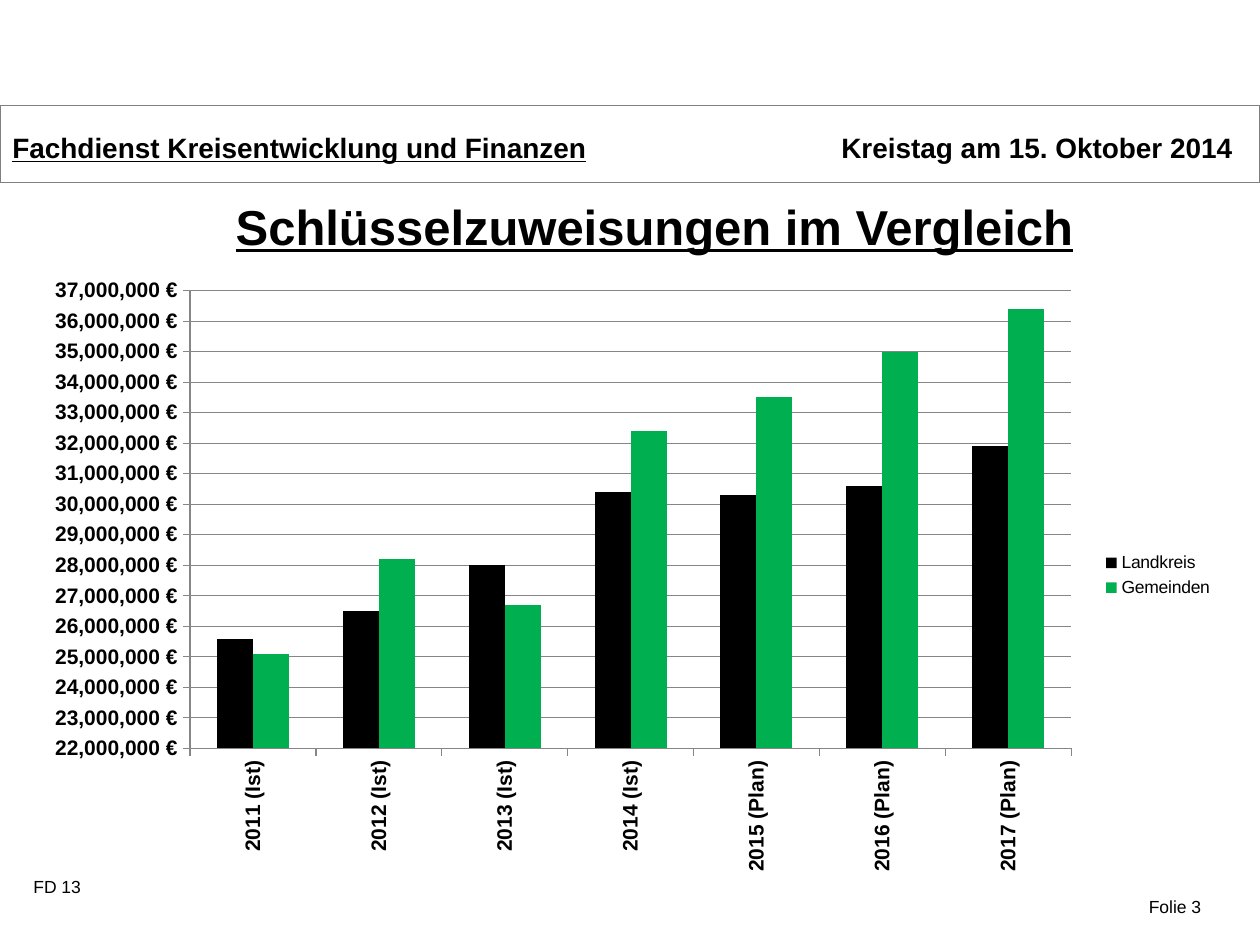
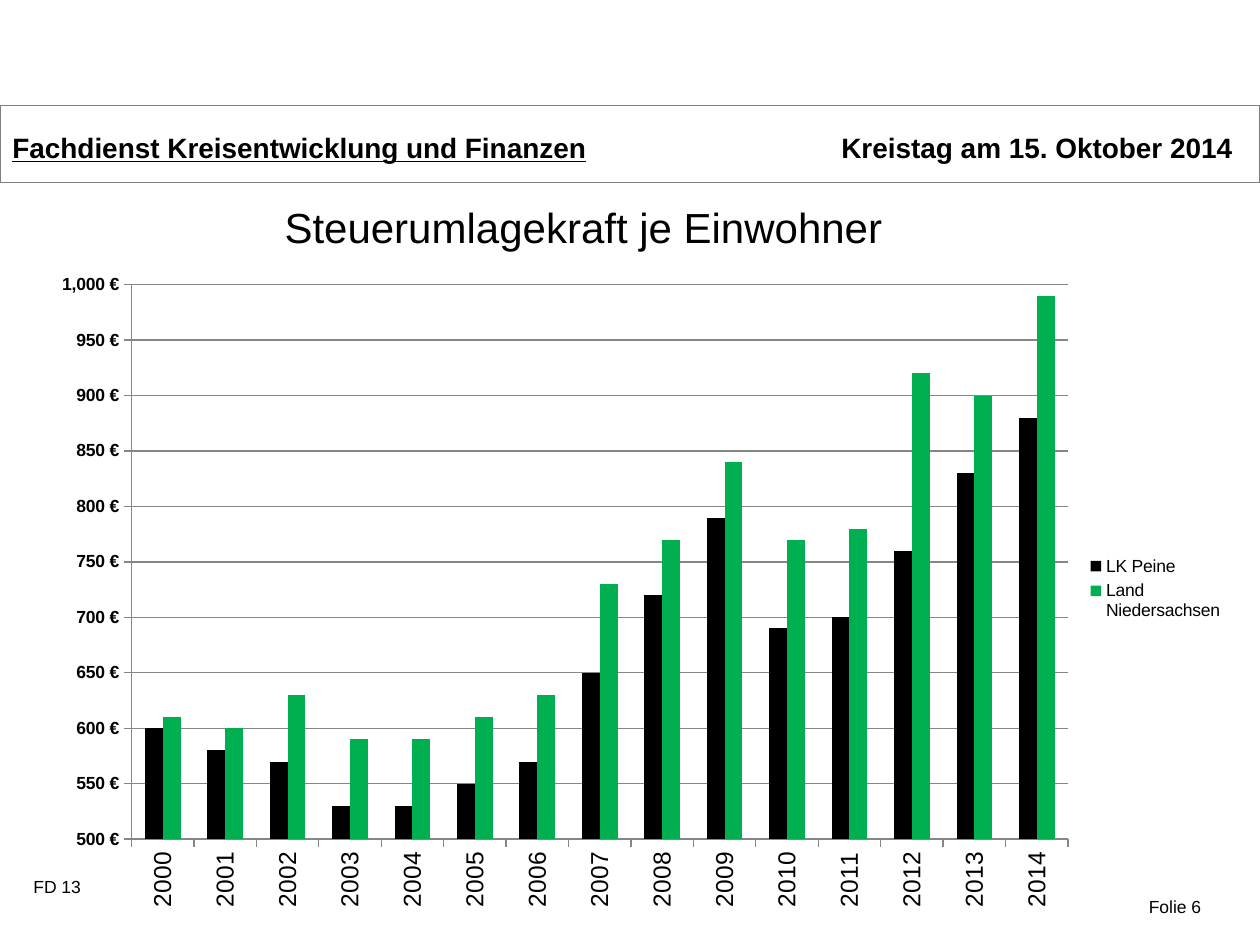
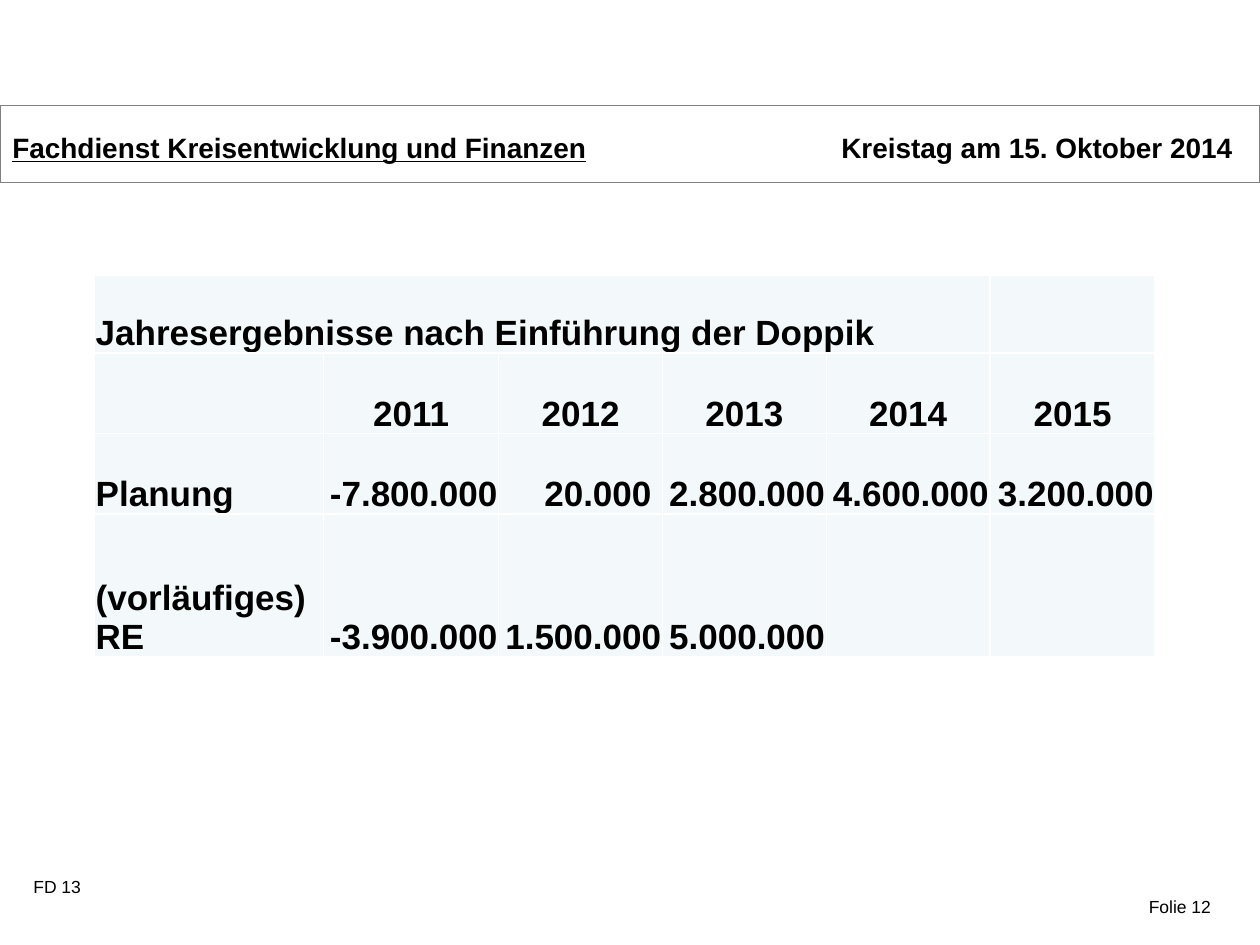
from lxml.etree import SubElement
from pptx import Presentation
from pptx.chart.data import CategoryChartData
from pptx.dml.color import RGBColor
from pptx.enum.chart import XL_CHART_TYPE, XL_LEGEND_POSITION, XL_TICK_MARK
from pptx.enum.shapes import MSO_SHAPE
from pptx.enum.text import MSO_ANCHOR, PP_ALIGN
from pptx.oxml import parse_xml
from pptx.oxml.ns import nsdecls, qn
from pptx.util import Pt

FONT = "Arial"
BLACK = "000000"
GREEN = "00B050"
BAND_LINE = "808080"
AXIS_LINE = "868686"
CELL_FILL = "F3F9FA"
WHITE = "FFFFFF"
EURO_FORMAT = '#,##0\\ "€"'


def color(hex_string):
    return RGBColor.from_string(hex_string)


def write(text_frame, text, size, bold=False, underline=False, align=PP_ALIGN.LEFT):
    """Fill a text frame or table cell with one formatted paragraph."""
    text_frame.word_wrap = True
    paragraph = text_frame.paragraphs[0]
    paragraph.text = text
    paragraph.alignment = align
    font = paragraph.font
    font.name, font.size, font.bold, font.underline = FONT, Pt(size), bold, underline
    font.color.rgb = color(BLACK)


presentation = Presentation()
presentation.slide_width, presentation.slide_height = Pt(720), Pt(540)
blank_layout = presentation.slide_layouts[6]

# Header band and footers on every slide
slides = []
for number in (3, 6, 12):
    slide = presentation.slides.add_slide(blank_layout)
    slides.append(slide)

    band = slide.shapes.add_shape(MSO_SHAPE.RECTANGLE, 0, Pt(60.5), Pt(720), Pt(44))
    band.shadow.inherit = False
    band.fill.background()
    band.line.color.rgb = color(BAND_LINE)
    band.line.width = Pt(0.75)
    band.text_frame.vertical_anchor = MSO_ANCHOR.TOP
    band.text_frame.margin_top = Pt(14)
    write(band.text_frame, "Fachdienst Kreisentwicklung und Finanzen", 16,
          bold=True, underline=True)

    meeting = slide.shapes.add_textbox(Pt(445), Pt(71.3), Pt(266.4), Pt(26.6))
    write(meeting.text_frame, "Kreistag am 15. Oktober 2014", 16,
          bold=True, align=PP_ALIGN.RIGHT)
    department = slide.shapes.add_textbox(Pt(12), Pt(496.8), Pt(87), Pt(19.4))
    write(department.text_frame, "FD 13", 10)
    slide_number = slide.shapes.add_textbox(Pt(649.4), Pt(508.3), Pt(62.6), Pt(19.4))
    write(slide_number.text_frame, f"Folie {number}", 10)

allocation_slide, tax_slide, result_slide = slides

# Chart titles
title = allocation_slide.shapes.add_textbox(Pt(36.7), Pt(108.7), Pt(674.6), Pt(41))
write(title.text_frame, "Schlüsselzuweisungen im Vergleich", 28,
      bold=True, underline=True, align=PP_ALIGN.CENTER)
title = tax_slide.shapes.add_textbox(Pt(155.5), Pt(111.6), Pt(368.6), Pt(36.7))
write(title.text_frame, "Steuerumlagekraft je Einwohner", 24)

# Column charts
charts = [
    {
        "slide": allocation_slide,
        "box": (20.2, 152, 680.4, 353.5),
        "plot": {"x": 0.13, "y": 0.04, "w": 0.74, "h": 0.74},
        "categories": [f"{year} (Ist)" for year in range(2011, 2015)]
        + [f"{year} (Plan)" for year in range(2015, 2018)],
        "series": {
            "Landkreis": [25600000, 26500000, 28000000, 30400000,
                          30300000, 30600000, 31900000],
            "Gemeinden": [25100000, 28200000, 26700000, 32400000,
                          33500000, 35000000, 36400000],
        },
        "scale": (22000000, 37000000, 1000000),
        "category_font": (12, True),
        "value_font": (12, True),
    },
    {
        "slide": tax_slide,
        "box": (20.2, 147.6, 686.2, 377.3),
        "plot": {"x": 0.08, "y": 0.04, "w": 0.78, "h": 0.84},
        "categories": [str(year) for year in range(2000, 2015)],
        "series": {
            "LK Peine": [600, 580, 570, 530, 530, 550, 570, 650,
                         720, 790, 690, 700, 760, 830, 880],
            "Land \nNiedersachsen": [610, 600, 630, 590, 590, 610, 630, 730,
                                     770, 840, 770, 780, 920, 900, 990],
        },
        "scale": (500, 1000, 50),
        "category_font": (14, False),
        "value_font": (10, True),
    },
]

for settings in charts:
    chart_data = CategoryChartData(number_format=EURO_FORMAT)
    chart_data.categories = settings["categories"]
    for name, values in settings["series"].items():
        chart_data.add_series(name, values)
    chart = settings["slide"].shapes.add_chart(
        XL_CHART_TYPE.COLUMN_CLUSTERED, *map(Pt, settings["box"]), chart_data).chart
    chart.has_title = False
    chart.font.name, chart.font.size = FONT, Pt(10)
    chart.font.color.rgb = color(BLACK)

    chart.has_legend = True
    chart.legend.position = XL_LEGEND_POSITION.RIGHT
    chart.legend.include_in_layout = False

    plot = chart.plots[0]
    plot.gap_width, plot.overlap = 150, 0
    plot.vary_by_categories = False
    for series, fill in zip(plot.series, (BLACK, GREEN)):
        series.format.fill.solid()
        series.format.fill.fore_color.rgb = color(fill)

    value_axis = chart.value_axis
    (value_axis.minimum_scale, value_axis.maximum_scale,
     value_axis.major_unit) = settings["scale"]
    value_axis.major_gridlines.format.line.color.rgb = color(AXIS_LINE)
    value_axis.tick_labels.number_format = EURO_FORMAT
    value_axis.tick_labels.number_format_is_linked = False
    for axis, key in ((chart.category_axis, "category_font"), (value_axis, "value_font")):
        axis.major_tick_mark = XL_TICK_MARK.OUTSIDE
        axis.minor_tick_mark = XL_TICK_MARK.NONE
        axis.format.line.color.rgb = color(AXIS_LINE)
        font = axis.tick_labels.font
        size, font.bold = settings[key]
        font.name, font.size = FONT, Pt(size)
        font.color.rgb = color(BLACK)

    # Category labels read upwards
    label_body = chart.category_axis._element.find(f"{qn('c:txPr')}/{qn('a:bodyPr')}")
    label_body.set("rot", "-5400000")
    label_body.set("vert", "horz")

    # Fixed inner plot area, as fractions of the chart
    plot_area = chart._chartSpace.chart.plotArea
    for old_layout in plot_area.findall(qn("c:layout")):
        plot_area.remove(old_layout)
    layout = parse_xml(f"<c:layout {nsdecls('c')}><c:manualLayout/></c:layout>")
    entries = {"layoutTarget": "inner", "xMode": "edge", "yMode": "edge", **settings["plot"]}
    for name, value in entries.items():
        SubElement(layout[0], qn(f"c:{name}")).set("val", str(value))
    plot_area.insert(0, layout)

# Table of annual results
rows = [
    ["Jahresergebnisse nach Einführung der Doppik", "", "", "", "", ""],
    ["", "2011", "2012", "2013", "2014", "2015"],
    ["Planung", "-7.800.000 ", "20.000 ", "2.800.000 ", "4.600.000 ", "3.200.000 "],
    ["(vorläufiges) RE", "-3.900.000 ", "1.500.000 ", "5.000.000 ", "", ""],
]
column_widths = [131, 100, 93.6, 93.6, 93.6, 94.3]
row_heights = [44.6, 46.1, 46.1, 81.4]
table = result_slide.shapes.add_table(
    len(rows), len(column_widths), Pt(54), Pt(157),
    Pt(sum(column_widths)), Pt(sum(row_heights))).table
table.first_row = table.horz_banding = False
for column, width in zip(table.columns, column_widths):
    column.width = Pt(width)
for row, height in zip(table.rows, row_heights):
    row.height = Pt(height)
table.cell(0, 0).merge(table.cell(0, 4))

for row_index, texts in enumerate(rows):
    for column_index, text in enumerate(texts):
        cell = table.cell(row_index, column_index)
        cell.vertical_anchor = MSO_ANCHOR.BOTTOM
        cell.margin_left = cell.margin_right = cell.margin_top = Pt(0.7)
        cell.margin_bottom = 0
        for side in "LRTB":
            cell._tc.get_or_add_tcPr().append(parse_xml(
                f'<a:ln{side} {nsdecls("a")} w="12700"><a:solidFill>'
                f'<a:srgbClr val="{WHITE}"/></a:solidFill></a:ln{side}>'))
        cell.fill.solid()
        cell.fill.fore_color.rgb = color(CELL_FILL)
        if text:
            if column_index == 0:
                align = PP_ALIGN.LEFT
            else:
                align = PP_ALIGN.CENTER if row_index == 1 else PP_ALIGN.RIGHT
            write(cell.text_frame, text, 20, bold=True, align=align)

presentation.save("out.pptx")
